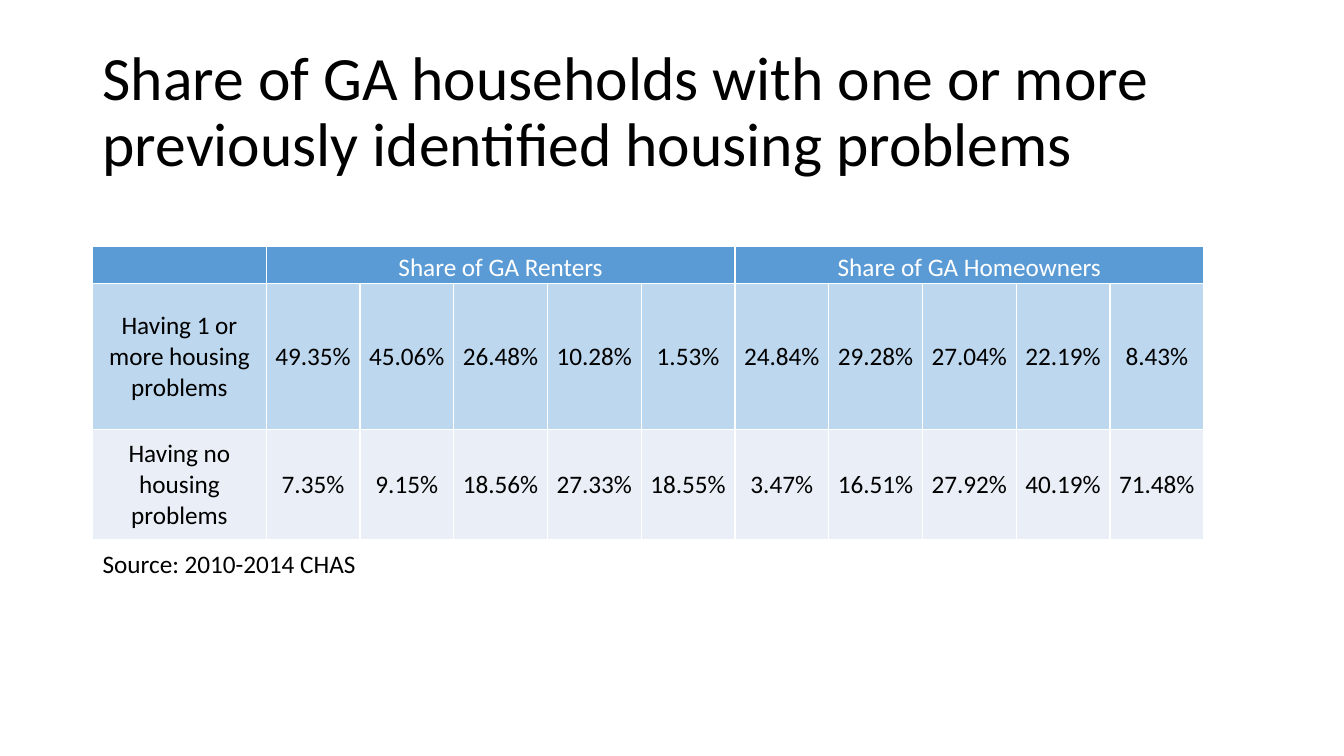
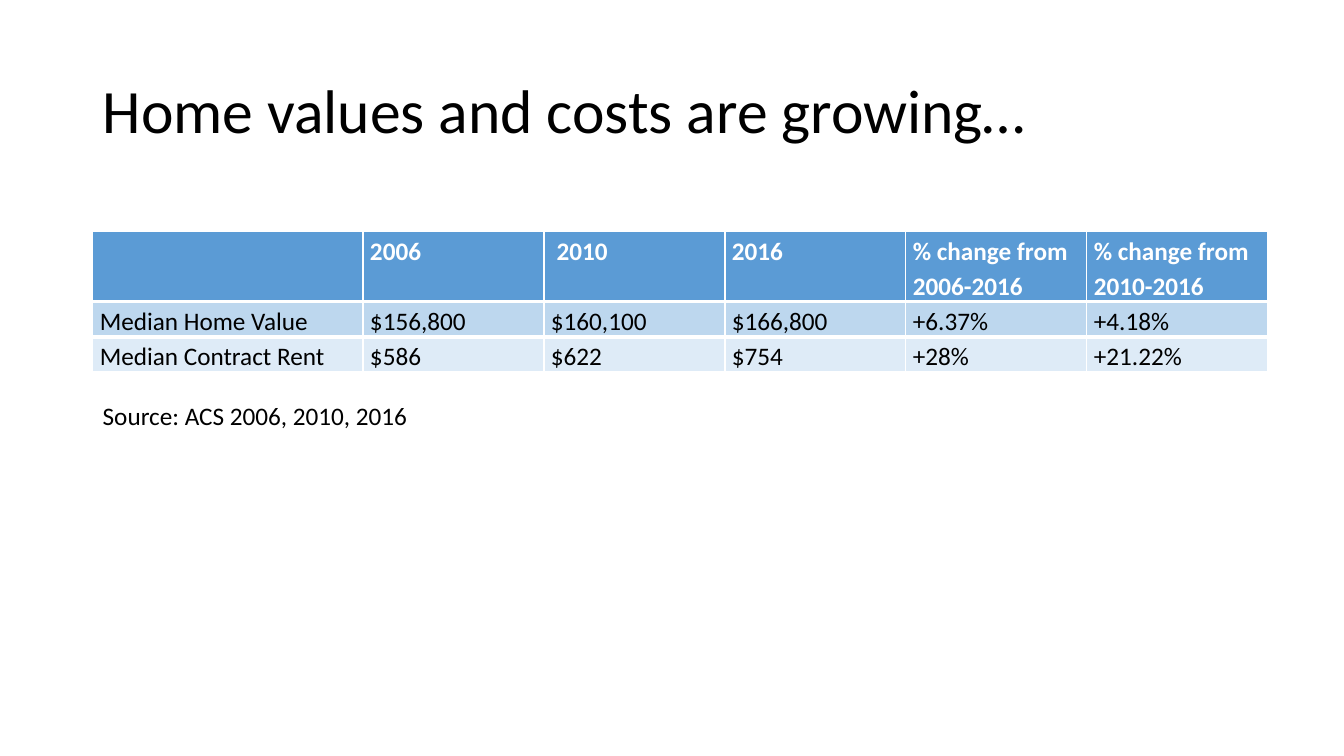
from lxml import etree
from pptx import Presentation
from pptx import util as u
from pptx.dml.color import RGBColor
from pptx.enum import text as t
from pptx.oxml.ns import qn

WIDE, HIGH = 13.33, 7.5
EDGE = 0.92
FONT = "Calibri"
BLACK, WHITE = "000000", "FFFFFF"
HEAD, BAND = "5B9BD5", "BDD7EE"

SLIDES = [
    {
        "title": "Share of GA households with one or more previously identified housing problems",
        "cells": [
            ["", "Share of GA Renters", "", "", "", "",
             "Share of GA Homeowners", "", "", "", ""],
            ["Having 1 or more housing problems",
             "49.35%", "45.06%", "26.48%", "10.28%", "1.53%",
             "24.84%", "29.28%", "27.04%", "22.19%", "8.43%"],
            ["Having no housing problems",
             "7.35%", "9.15%", "18.56%", "27.33%", "18.55%",
             "3.47%", "16.51%", "27.92%", "40.19%", "71.48%"],
        ],
        "spans": [(1, 5), (6, 10)],
        "top": 2.44, "cols": (1.72, 0.93), "rows": (0.37, 1.45, 1.09),
        "fills": (HEAD, BAND, "EAEFF7"),
        "align": t.PP_ALIGN.CENTER,
        "anchors": (t.MSO_ANCHOR.BOTTOM, t.MSO_ANCHOR.MIDDLE, t.MSO_ANCHOR.MIDDLE),
        "inset": (0.01, 0.01), "lines": 1, "bold": False, "rule": 1,
        "source": ("Source: 2010-2014 CHAS", 5.39, 3),
    },
    {
        "title": "Home values and costs are growing…",
        "cells": [
            ["", "2006", " 2010", "2016",
             "% change from 2006-2016", "% change from 2010-2016"],
            ["Median Home Value", "$156,800", "$160,100", "$166,800", "+6.37%", "+4.18%"],
            ["Median Contract Rent", "$586", "$622", "$754", "+28%", "+21.22%"],
        ],
        "spans": [],
        "top": 2.3, "cols": (2.68, 1.795), "rows": (0.69, 0.35, 0.35),
        "fills": (HEAD, BAND, "DEEBF7"),
        "align": t.PP_ALIGN.LEFT,
        "anchors": (t.MSO_ANCHOR.TOP,) * 3,
        "inset": (0.07, 0), "lines": 1.15, "bold": True, "rule": 3,
        "source": ("Source: ACS 2006, 2010, 2016", 3.92, 3.58),
    },
]


def paint(fmt, code):
    fmt.rgb = RGBColor.from_string(code)


def write(para, words, size, color=BLACK, bold=False):
    run = para.add_run()
    run.text = words
    run.font.size = u.Pt(size)
    run.font.name = FONT
    run.font.bold = bold
    paint(run.font.color, color)


def label(slide, words, box, size, anchor=t.MSO_ANCHOR.TOP, lines=1):
    frame = slide.shapes.add_textbox(*map(u.Inches, box)).text_frame
    frame.word_wrap = True
    frame.vertical_anchor = anchor
    para = frame.paragraphs[0]
    para.line_spacing = lines
    write(para, words, size)


def border(cell, widths):
    """Draw white left, right, top and bottom lines, widths in points."""
    props = cell._tc.get_or_add_tcPr()
    for spot, (side, width) in enumerate(zip("LRTB", widths)):
        line = etree.Element(qn(f"a:ln{side}"), w=str(u.Pt(width)))
        fill = etree.SubElement(line, qn("a:solidFill"))
        etree.SubElement(fill, qn("a:srgbClr"), val=WHITE)
        props.insert(spot, line)


def grid(slide, data):
    cells = data["cells"]
    count, last = len(cells[0]), len(cells) - 1
    first, other = data["cols"]
    widths = [first] + [other] * (count - 1)
    box = EDGE, data["top"], sum(widths), sum(data["rows"])
    table = slide.shapes.add_table(len(cells), count, *map(u.Inches, box)).table
    for col, width in zip(table.columns, widths):
        col.width = u.Inches(width)
    for row, high in zip(table.rows, data["rows"]):
        row.height = u.Inches(high)
    for start, end in data["spans"]:
        table.cell(0, start).merge(table.cell(0, end))

    side, top = map(u.Inches, data["inset"])
    for r, row in enumerate(cells):
        for c, words in enumerate(row):
            cell = table.cell(r, c)
            cell.fill.solid()
            paint(cell.fill.fore_color, data["fills"][r])
            cell.margin_left = cell.margin_right = side
            cell.margin_top, cell.margin_bottom = top, 0
            cell.vertical_anchor = data["anchors"][r]
            border(cell, (1, 1, data["rule"] if r else 1,
                          data["rule"] if r < last else 1))
            if words:
                para = cell.text_frame.paragraphs[0]
                para.alignment = data["align"]
                para.line_spacing = data["lines"]
                write(para, words, 18, BLACK if r else WHITE, data["bold"] and r == 0)


def main():
    deck = Presentation()
    deck.slide_width, deck.slide_height = u.Inches(WIDE), u.Inches(HIGH)
    for data in SLIDES:
        slide = deck.slides.add_slide(deck.slide_layouts[6])
        label(slide, data["title"], (EDGE, 0.4, 11.5, 1.45), 44, t.MSO_ANCHOR.MIDDLE, 0.9)
        grid(slide, data)
        words, top, width = data["source"]
        label(slide, words, (EDGE, top, width, 0.4), 18)
    deck.save("out.pptx")


if __name__ == "__main__":
    main()
